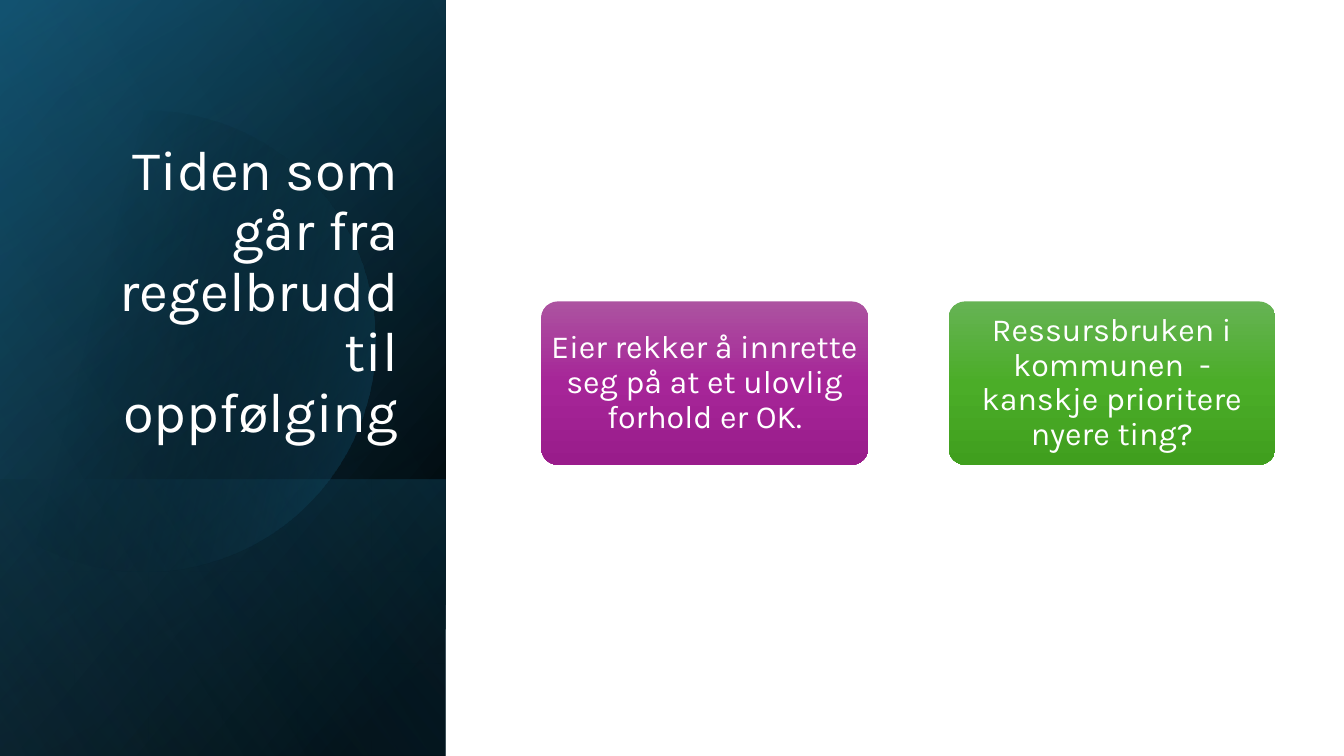
"""Build a slide with a dark gradient title panel and two coloured cards."""
import pptx
import pptx.util
import pptx.dml.color
import pptx.enum.shapes
import pptx.enum.text
import pptx.oxml.ns
from lxml import etree

Inches = pptx.util.Inches
SHAPE = pptx.enum.shapes.MSO_SHAPE
ALIGN = pptx.enum.text.PP_ALIGN
ANCHOR = pptx.enum.text.MSO_ANCHOR
qn = pptx.oxml.ns.qn

COLORS = {
    "white": "FFFFFF", "black": "000000", "navy": "104862",
    "teal": "156082", "sky": "46B1E1",
    "purple_top": "AC53A0", "purple_mid": "A62598", "purple_low": "991C8B",
    "green_top": "66B354", "green_mid": "4BAD28", "green_low": "409F1E",
}


def fill_gradient(sp, stops, angle):
    """Fill with (position %, colour, opacity %) stops, angle clockwise."""
    sp.shadow.inherit = False
    sp.line.fill.background()
    sp.fill.gradient()
    sp.fill.gradient_angle = (360 - angle) % 360
    gs_list = sp._element.spPr.find(qn("a:gradFill")).find(qn("a:gsLst"))
    for gs in list(gs_list):
        gs_list.remove(gs)
    for pos, color, opacity in stops:
        gs = etree.SubElement(gs_list, qn("a:gs"), pos=str(pos * 1000))
        clr = etree.SubElement(gs, qn("a:srgbClr"), val=COLORS[color])
        if opacity < 100:
            etree.SubElement(clr, qn("a:alpha"), val=str(opacity * 1000))


def format_text(tf, size, align, anchor):
    """Apply the shared text style to a one-paragraph text frame."""
    tf.word_wrap = True
    tf.auto_size = pptx.enum.text.MSO_AUTO_SIZE.NONE
    tf.vertical_anchor = anchor
    p = tf.paragraphs[0]
    p.alignment = align
    p.line_spacing = 0.9
    r = p.runs[0]
    r.font.size = pptx.util.Pt(size)
    r.font.name = "Karla"
    r.font.color.rgb = pptx.dml.color.RGBColor.from_string(COLORS["white"])


prs = pptx.Presentation()
prs.slide_width = Inches(13.33)
prs.slide_height = Inches(7.5)
s = prs.slides.add_slide(prs.slide_layouts[5])

full = (-1.54, 1.54, 7.5, 4.42)
lower = (0.84, 3.92, 2.74, 4.42)
panels = [
    (full, [(8, "black", 100), (100, "navy", 100)], 50),
    (full, [(0, "black", 0), (99, "teal", 46)], 30),
    (lower, [(2, "teal", 29), (100, "black", 30)], 130),
    (full, [(0, "black", 0), (99, "sky", 11)], 120),
]

curves = [
    [(1.49, 1.1), (2.46, 1.12), (3.35, 1.77), (3.63, 2.75)],
    [(3.63, 2.75), (3.98, 3.97), (3.28, 5.23), (2.07, 5.58)],
    [(2.07, 5.58), (1.31, 5.8), (0.53, 5.61), (0, 5.16)],
    [(0, 1.61), (0.43, 1.27), (0.96, 1.09), (1.49, 1.1)],
]
steps = 24
outline = []
for curve in curves:
    for i in range(steps + 1):
        t = i / steps
        weights = ((1 - t) ** 3, 3 * t * (1 - t) ** 2, 3 * t * t * (1 - t), t ** 3)
        outline.append([Inches(sum(w * pt[axis] for w, pt in zip(weights, curve)))
                        for axis in (0, 1)])

for i, (box, stops, angle) in enumerate(panels):
    if i == 3:
        fb = s.shapes.build_freeform(*outline[0])
        fb.add_line_segments(outline[1:], close=True)
        disc = fb.convert_to_shape()
        fill_gradient(disc, [(29, "black", 0), (100, "teal", 43)], 14)
    sp = s.shapes.add_shape(SHAPE.RECTANGLE, *map(Inches, box))
    sp.rotation = 90
    sp._element.spPr.find(qn("a:xfrm")).set("flipH", "1")
    fill_gradient(sp, stops, angle)

title = s.shapes.title
title.left, title.top, title.width, title.height = map(Inches, (0.64, 1.84, 3.41, 2.62))
title.text_frame.text = "Tiden som går fra regelbrudd til oppfølging"
format_text(title.text_frame, 40, ALIGN.RIGHT, ANCHOR.BOTTOM)
s.shapes._spTree.append(title._element)

cards = [
    ("Eier rekker å innrette seg på at et ulovlig forhold er OK.", "purple"),
    ("Ressursbruken i kommunen  - kanskje prioritere nyere ting?", "green"),
]
for i, (text, hue) in enumerate(cards):
    sp = s.shapes.add_shape(SHAPE.ROUNDED_RECTANGLE, Inches(5.37 + 4.04 * i),
                            Inches(2.99), Inches(3.24), Inches(1.62))
    sp.adjustments[0] = 0.1
    fill_gradient(sp, [(0, hue + "_top", 100), (50, hue + "_mid", 100),
                       (100, hue + "_low", 100)], 90)
    tf = sp.text_frame
    tf.margin_left = tf.margin_right = Inches(0.04)
    tf.margin_top = tf.margin_bottom = Inches(0.03)
    tf.text = text
    format_text(tf, 23, ALIGN.CENTER, ANCHOR.MIDDLE)

prs.save("out.pptx")
